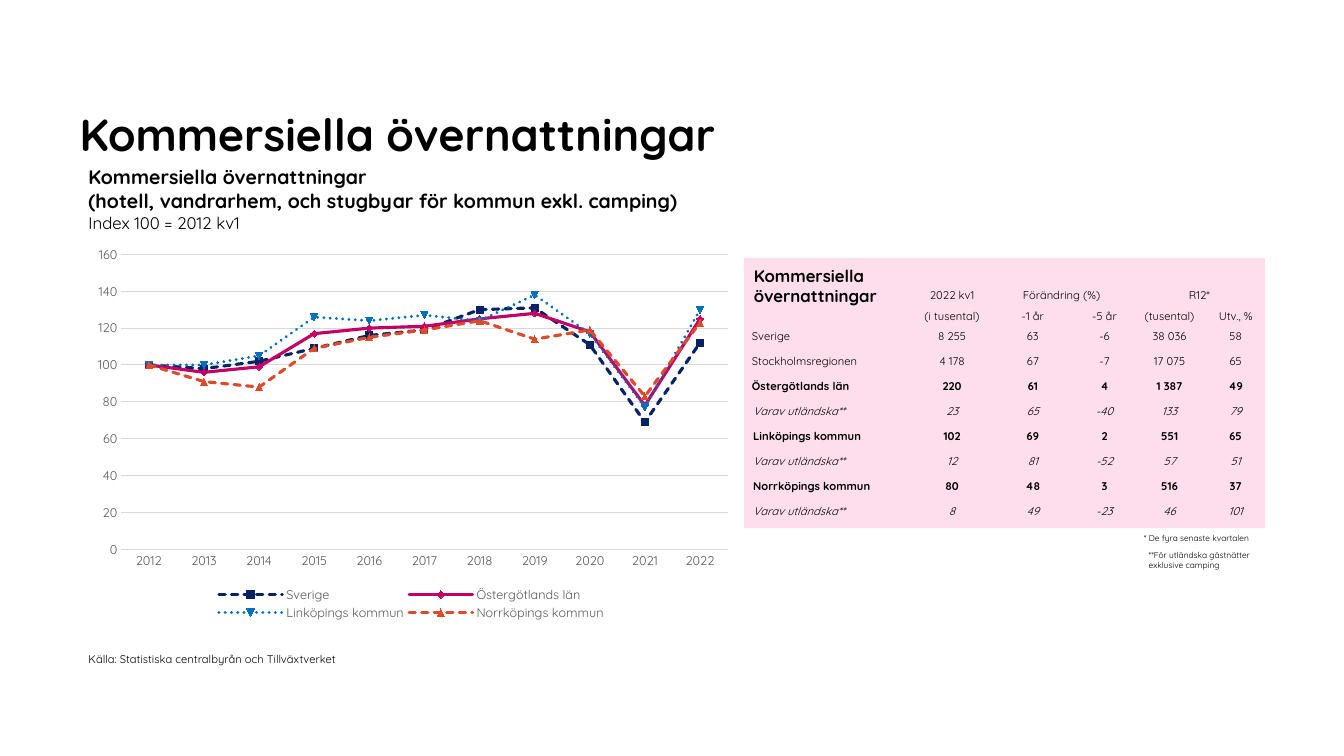
"""Slide on commercial overnight stays: an index line chart beside a regional table."""
from dataclasses import dataclass

from lxml.etree import SubElement
from pptx import Presentation
from pptx.chart.data import CategoryChartData as ChartData
from pptx.dml.color import RGBColor as RGB
from pptx.enum.chart import XL_CHART_TYPE as Kind, XL_LEGEND_POSITION as Place, XL_TICK_MARK as Tick
from pptx.enum.dml import MSO_LINE as Dash
from pptx.enum.shapes import MSO_SHAPE as Shape
from pptx.enum.text import MSO_ANCHOR as Anchor, PP_ALIGN as Align
from pptx.oxml.ns import qn
from pptx.util import Cm, Pt


@dataclass(frozen=True)
class Theme:
    face: str = "Quicksand"
    ink: RGB = RGB.from_string("000000")
    grey: RGB = RGB.from_string("595959")
    grid: RGB = RGB.from_string("D9D9D9")
    panel: RGB = RGB.from_string("FEDEED")
    navy: RGB = RGB.from_string("052364")
    plum: RGB = RGB.from_string("C40064")
    blue: RGB = RGB.from_string("006EBF")
    rust: RGB = RGB.from_string("DD4A2C")
    title: Pt = Pt(32)
    lead: Pt = Pt(14)
    head: Pt = Pt(12)
    axis: Pt = Pt(9)
    body: Pt = Pt(8)
    note: Pt = Pt(6)


theme = Theme()


def style(font, size, color=theme.ink, **extra):
    for key, val in {"name": theme.face, "size": size, **extra}.items():
        setattr(font, key, val)
    font.color.rgb = color


def place(node, **parts):
    old = node.find(qn("c:layout"))
    if old is not None:
        node.remove(old)
    frame = SubElement(node, qn("c:layout"))
    node.remove(frame)
    node.insert(1 if node.tag == qn("c:legend") else 0, frame)
    manual = SubElement(frame, qn("c:manualLayout"))
    for key, val in parts.items():
        SubElement(manual, qn(f"c:{key}")).set("val", str(val))


deck = Presentation()
deck.slide_width, deck.slide_height = Cm(33.87), Cm(19.05)
slide = deck.slides.add_slide(deck.slide_layouts[6])

panel = slide.shapes.add_shape(Shape.RECTANGLE, Cm(18.75), Cm(6.5), Cm(13.13), Cm(6.81))
panel.shadow.inherit = False
panel.fill.solid()
panel.fill.fore_color.rgb = theme.panel
panel.line.fill.background()

name = "Kommersiella övernattningar"
flush = {"margin_left": 0, "margin_right": 0, "margin_top": 0, "margin_bottom": 0,
         "vertical_anchor": Anchor.BOTTOM}
texts = [
    ((2.01, 0.94, 23.42, 3.1), [(name, theme.title, True)], flush),
    ((1.98, 4.04, 16.08, 1.96), [
        (name, theme.lead, True),
        ("(hotell, vandrarhem, och stugbyar för kommun exkl. camping)", theme.lead, True),
        ("Index 100 = 2012 kv1", theme.head, False)], {}),
    ((1.98, 16.31, 7.5, 0.61),
     [("Källa: Statistiska centralbyrån och Tillväxtverket", theme.body, False)], {}),
    ((18.75, 6.58, 6.1, 1.2), [(name, theme.head, True)], {}),
    ((28.58, 13.31, 3.4, 0.51), [("* De fyra senaste kvartalen", theme.note, False)], {}),
    ((28.7, 13.74, 3.48, 0.76),
     [("**För utländska gästnätter exklusive camping", theme.note, False)], {}),
]
for spot, lines, form in texts:
    frame = slide.shapes.add_textbox(*map(Cm, spot)).text_frame
    for key, val in {"word_wrap": True, **form}.items():
        setattr(frame, key, val)
    for row, (words, size, bold) in enumerate(lines):
        para = frame.add_paragraph() if row else frame.paragraphs[0]
        run = para.add_run()
        run.text = words
        style(run.font, size, bold=bold)

abroad = "Varav utländska**"
rows = [
    ["", "2022 kv1", "Förändring (%)", "", "R12*", ""],
    ["", "(i tusental)", "-1 år", "-5 år", "(tusental)", "Utv., %"],
    ["Sverige", "8 255", "63", "-6", "38 036", "58"],
    ["Stockholmsregionen", "4 178", "67", "-7", "17 075", "65"],
    ["Östergötlands län", "220", "61", "4", "1 387", "49"],
    [abroad, "23", "65", "-40", "133", "79"],
    ["Linköpings kommun", "102", "69", "2", "551", "65"],
    [abroad, "12", "81", "-52", "57", "51"],
    ["Norrköpings kommun", "80", "48", "3", "516", "37"],
    [abroad, "8", "49", "-23", "46", "101"],
]
table = slide.shapes.add_table(len(rows), 6, Cm(18.75), Cm(7.11), Cm(13.13), Cm(6.05)).table
table.first_row = table.horz_banding = False
table._tbl.tblPr.find(qn("a:tableStyleId")).text = "{2D5ABB26-0587-4C30-8999-92F81FD0307C}"
for col, wide in zip(table.columns, [4.29, 1.91, 2.16, 1.45, 1.83, 1.5]):
    col.width = Cm(wide)
for row, high in zip(table.rows, [0.51, 0.53] + [0.63] * 8):
    row.height = Cm(high)
for left in (2, 4):
    table.cell(0, left).merge(table.cell(0, left + 1))
for y, row in enumerate(rows):
    for x, words in enumerate(row):
        cell = table.cell(y, x)
        cell.fill.background()
        edge = Cm(0 if x == 0 and y < 5 else 0.03)
        form = {"margin_left": edge, "margin_right": edge, "margin_top": edge, "margin_bottom": 0,
                "vertical_anchor": Anchor.BOTTOM if y < 2 else Anchor.MIDDLE}
        for key, val in form.items():
            setattr(cell, key, val)
        para = cell.text_frame.paragraphs[0]
        if x:
            para.alignment = Align.CENTER
        else:
            para._p.get_or_add_pPr().set("marL", str(Cm(0.2)))
        if words:
            run = para.add_run()
            run.text = words
            style(run.font, theme.body, bold=y in (4, 6, 8), italic=row[0] == abroad)
        else:
            SubElement(para._p, qn("a:endParaRPr")).set("sz", "800")

series = [
    ("Sverige", theme.navy, Dash.SQUARE_DOT, [100, 98, 102, 109, 116, 119, 130, 131, 111, 69, 112]),
    ("Östergötlands län", theme.plum, None, [100, 96, 99, 117, 120, 121, 125, 128, 118, 78, 125]),
    ("Linköpings kommun", theme.blue, Dash.ROUND_DOT,
     [100, 100, 105, 126, 124, 127, 124, 138, 117, 77, 130]),
    ("Norrköpings kommun", theme.rust, Dash.SQUARE_DOT,
     [100, 91, 88, 109, 115, 119, 124, 114, 119, 83, 123]),
]
data = ChartData()
data.categories = [str(year) for year in range(2012, 2023)]
for label, _, _, vals in series:
    data.add_series(label, vals)
chart = slide.shapes.add_chart(
    Kind.LINE, Cm(2.06), Cm(6.02), Cm(16.61), Cm(9.78), data).chart
chart.has_title = False
style(chart.font, Pt(10))
plot = chart.plots[0]
plot.vary_by_categories = False
for item, (_, color, dash, _) in zip(plot.series, series):
    item.smooth = False
    item.marker.style = None
    line = item.format.line
    line.color.rgb = color
    line.width = Pt(2.25)
    if dash:
        line.dash_style = dash
    line._get_or_add_ln().set("cap", "rnd")

years, index = chart.category_axis, chart.value_axis
for axis in (years, index):
    axis.major_tick_mark = axis.minor_tick_mark = Tick.NONE
    style(axis.tick_labels.font, theme.axis, theme.grey)
for key, val in {"minimum_scale": 0, "maximum_scale": 160, "major_unit": 20,
                 "has_major_gridlines": True}.items():
    setattr(index, key, val)
index.format.line.fill.background()
for line in (years.format.line, index.major_gridlines.format.line):
    line.color.rgb = theme.grid
    line.width = Pt(0.75)

chart.has_legend = True
legend = chart.legend
legend.position = Place.BOTTOM
legend.include_in_layout = False
style(legend.font, theme.axis, theme.grey)
place(legend._element, xMode="edge", yMode="edge", x=0.2, y=0.89, w=0.6, h=0.1)
place(chart._chartSpace.chart.plotArea, layoutTarget="inner", xMode="edge", yMode="edge",
      x=0.06, y=0.04, w=0.92, h=0.76)

deck.save("out.pptx")
